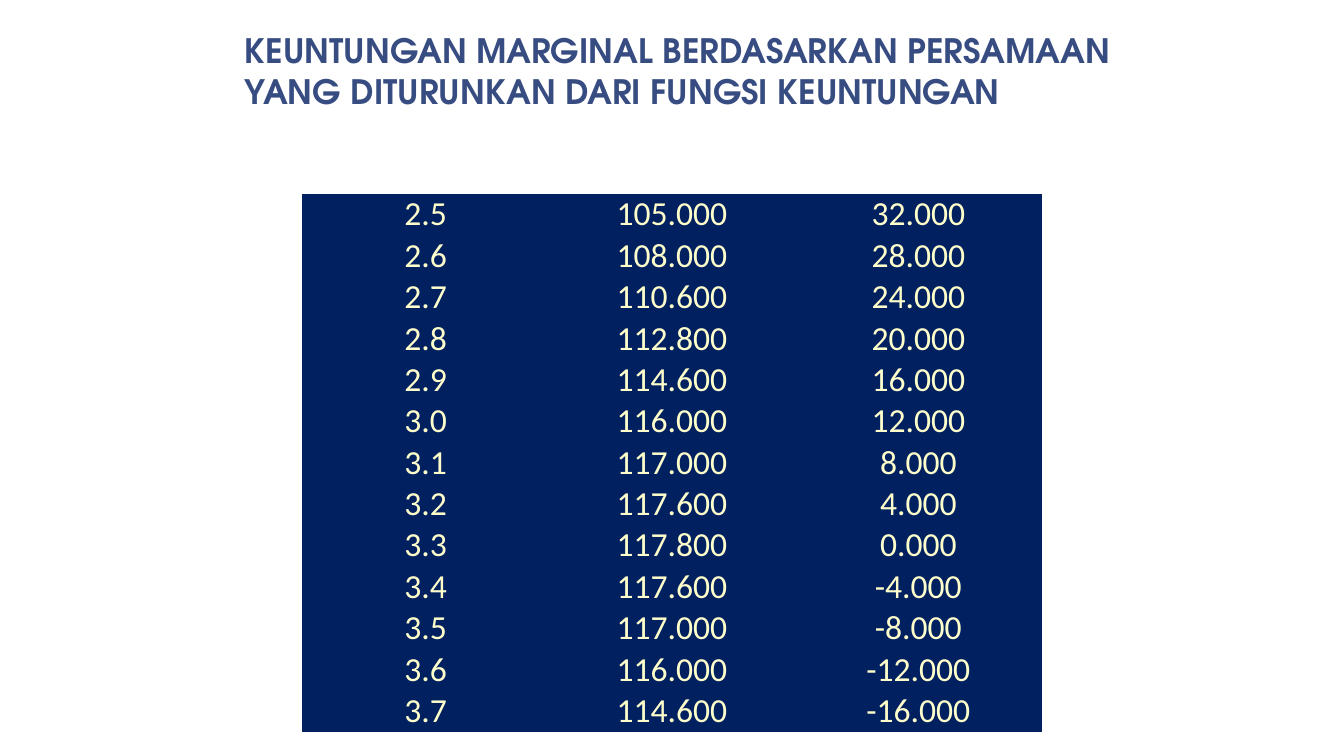
import pptx
import pptx.dml.color
import pptx.enum.text
import pptx.oxml.ns
import pptx.util

Inches = pptx.util.Inches
NAVY = pptx.dml.color.RGBColor(0x00, 0x20, 0x60)
CREAM = pptx.dml.color.RGBColor(0xFF, 0xFF, 0xCC)
SLATE_BLUE = pptx.dml.color.RGBColor(0x37, 0x4C, 0x81)
NO_STYLE_NO_GRID = "{2D5ABB26-0587-4C30-8999-92F81FD0307C}"

# Quantity, profit, marginal profit
PROFIT_ROWS = [
    ("2.5", "105.000", "32.000"),
    ("2.6", "108.000", "28.000"),
    ("2.7", "110.600", "24.000"),
    ("2.8", "112.800", "20.000"),
    ("2.9", "114.600", "16.000"),
    ("3.0", "116.000", "12.000"),
    ("3.1", "117.000", "8.000"),
    ("3.2", "117.600", "4.000"),
    ("3.3", "117.800", "0.000"),
    ("3.4", "117.600", "-4.000"),
    ("3.5", "117.000", "-8.000"),
    ("3.6", "116.000", "-12.000"),
    ("3.7", "114.600", "-16.000"),
]


def format_text(paragraph, font_name, color, alignment, bold=False):
    paragraph.alignment = alignment
    font = paragraph.runs[0].font
    font.name = font_name
    font.size = pptx.util.Pt(24)
    font.bold = bold
    font.color.rgb = color


presentation = pptx.Presentation()
presentation.slide_width = Inches(13.33)
presentation.slide_height = Inches(7.5)
slide = presentation.slides.add_slide(presentation.slide_layouts[5])

# Heading
heading = slide.shapes.title
heading.left, heading.top = Inches(2.33), Inches(0.25)
heading.width, heading.height = Inches(9), Inches(0.91)
heading.text_frame.text = (
    "KEUNTUNGAN MARGINAL BERDASARKAN PERSAMAAN "
    "YANG DITURUNKAN DARI FUNGSI KEUNTUNGAN"
)
heading.text_frame.word_wrap = True
heading.text_frame.auto_size = pptx.enum.text.MSO_AUTO_SIZE.NONE
heading.text_frame.vertical_anchor = pptx.enum.text.MSO_ANCHOR.TOP
format_text(heading.text_frame.paragraphs[0], "TeX Gyre Adventor", SLATE_BLUE,
            pptx.enum.text.PP_ALIGN.LEFT, bold=True)

# Profit table
profit_frame = slide.shapes.add_table(
    len(PROFIT_ROWS), len(PROFIT_ROWS[0]),
    Inches(3), Inches(1.92), Inches(7.33), Inches(5.34),
)
profit_table = profit_frame.table
profit_table.first_row = False
profit_table.horz_banding = False
style_tag = pptx.oxml.ns.qn("a:tableStyleId")
next(profit_frame.element.iter(style_tag)).text = NO_STYLE_NO_GRID

for row_index, values in enumerate(PROFIT_ROWS):
    for column_index, value in enumerate(values):
        cell = profit_table.cell(row_index, column_index)
        cell.fill.solid()
        cell.fill.fore_color.rgb = NAVY
        cell.vertical_anchor = pptx.enum.text.MSO_ANCHOR.BOTTOM
        cell.margin_left = cell.margin_right = Inches(0.01)
        cell.margin_top = cell.margin_bottom = 0
        cell.text_frame.text = value
        format_text(cell.text_frame.paragraphs[0], "Calibri", CREAM,
                    pptx.enum.text.PP_ALIGN.CENTER)

presentation.save("out.pptx")
